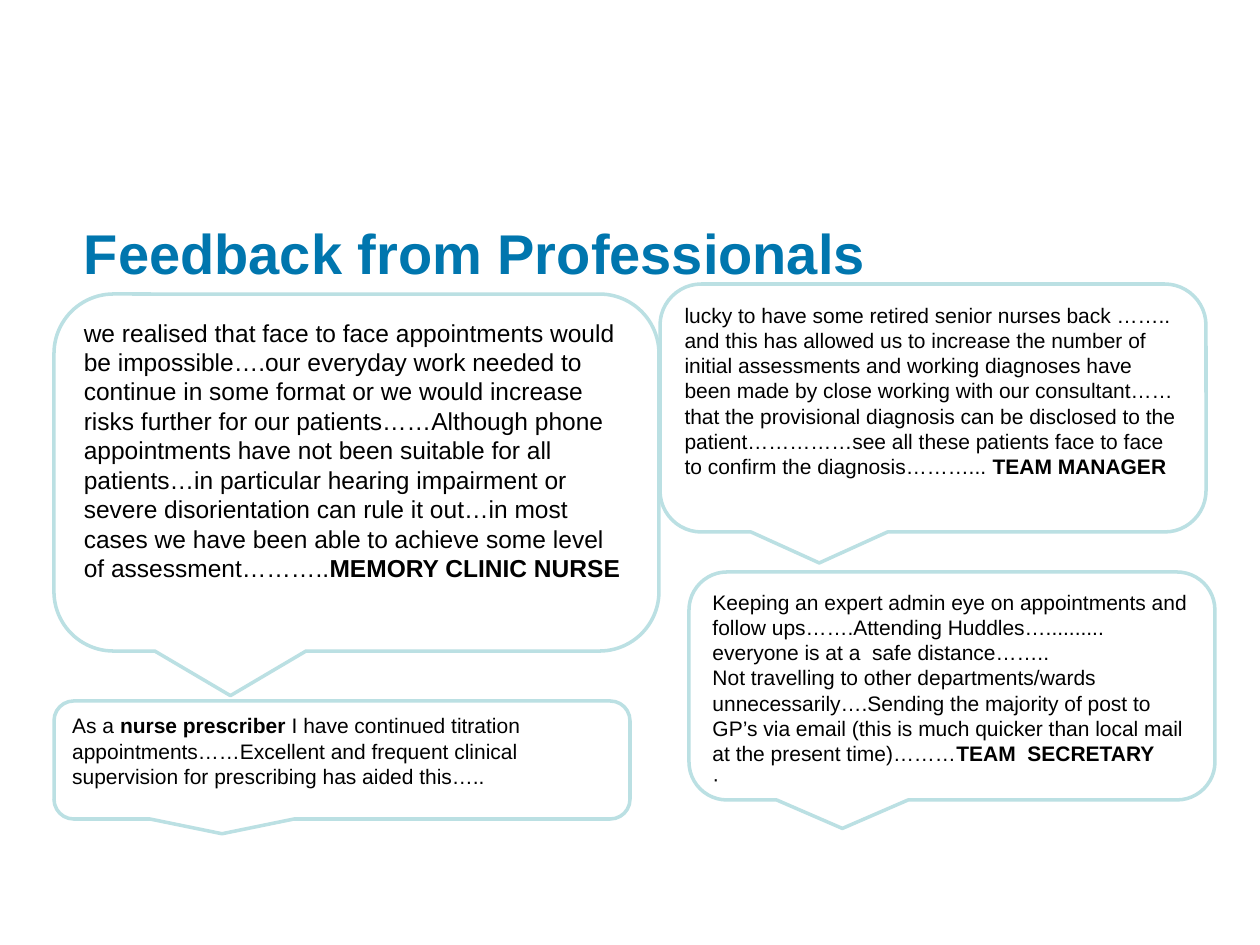
"""Build the slide of feedback from professionals."""
from pptx import Presentation
from pptx.dml.color import RGBColor
from pptx.enum.shapes import MSO_SHAPE
from pptx.enum.text import MSO_ANCHOR, PP_ALIGN
from pptx.util import Pt

CALLOUT = MSO_SHAPE.ROUNDED_RECTANGULAR_CALLOUT
TOP, MIDDLE = MSO_ANCHOR.TOP, MSO_ANCHOR.MIDDLE
LEFT = PP_ALIGN.LEFT
BLUE = RGBColor(0x00, 0x76, 0xAE)
TEAL = RGBColor(0xBB, 0xE0, 0xE3)
BLACK = RGBColor(0, 0, 0)
WHITE = RGBColor(255, 255, 255)
FONT = "Arial"
SCALE = 914400 / 126

NURSE = [[
    ("we realised that face to face appointments would be impossible….our "
     "everyday work needed to continue in some format or we would increase "
     "risks further for our patients……Although phone appointments have not "
     "been suitable for all patients…in particular hearing impairment or "
     "severe disorientation can rule it out…in most cases we have been able "
     "to achieve some level of assessment………..", False),
    ("MEMORY CLINIC NURSE", True),
]]
MANAGER = [[
    ("lucky to have some retired senior nurses back …….. and this has "
     "allowed us to increase the number of initial assessments and working "
     "diagnoses have been made by close working with our consultant…… that "
     "the provisional diagnosis can be disclosed to the patient……………see all "
     "these patients face to face to confirm the diagnosis………... ", False),
    ("TEAM MANAGER", True),
]]
PRESCRIBER = [[
    ("As a ", False),
    ("nurse prescriber ", True),
    ("I have continued titration appointments……Excellent and frequent "
     "clinical supervision for prescribing has aided this…..", False),
]]
SECRETARY = [
    [("Keeping an expert admin eye on appointments and follow "
      "ups…….Attending Huddles…..........", False)],
    [("everyone is at a  safe distance……..", False)],
    [("Not travelling to other departments/wards unnecessarily….Sending the "
      "majority of post to GP’s via email (this is much quicker than local "
      "mail at the present time)………", False),
     ("TEAM  SECRETARY", True)],
    [("·", False)],
]
QUOTES = [
    ((54, 294, 605, 357), NURSE, 14),
    ((660, 284, 546, 248), MANAGER, 12),
    ((54, 701, 576, 118), PRESCRIBER, 12),
    ((689, 572, 526, 228), SECRETARY, 12),
]


def px(num):
    """Turn pixels into EMU."""
    return round(num * SCALE)


def write(frame, paras, size=12, color=BLACK, anchor=TOP):
    """Fill a text frame with paragraphs of (text, bold) runs."""
    frame.word_wrap = True
    frame.vertical_anchor = anchor
    for i, runs in enumerate(paras):
        para = frame.add_paragraph() if i else frame.paragraphs[0]
        para.alignment = LEFT
        for text, bold in runs:
            run = para.add_run()
            run.text = text
            font = run.font
            font.name, font.size, font.bold = FONT, Pt(size), bold
            font.color.rgb = color


def title(slide, box, text):
    """Add the heading without insets."""
    frame = slide.shapes.add_textbox(*map(px, box)).text_frame
    frame.margin_left = frame.margin_right = 0
    frame.margin_top = frame.margin_bottom = 0
    write(frame, [[(text, True)]], size=32, color=BLUE, anchor=MIDDLE)


def bubble(slide, box, paras, size):
    """Add a speech bubble with its quote."""
    shape = slide.shapes.add_shape(CALLOUT, *map(px, box))
    shape.shadow.inherit = False
    shape.fill.solid()
    shape.fill.fore_color.rgb = WHITE
    shape.line.color.rgb = TEAL
    shape.line.width = Pt(2)
    write(shape.text_frame, paras, size=size)


def main():
    """Build and save the slide."""
    deck = Presentation()
    deck.slide_width, deck.slide_height = px(1260), px(945)
    slide = deck.slides.add_slide(deck.slide_layouts[6])
    title(slide, (84, 205, 1071, 95), "Feedback from Professionals")
    for box, paras, size in QUOTES:
        bubble(slide, box, paras, size)
    deck.save("out.pptx")


if __name__ == "__main__":
    main()
